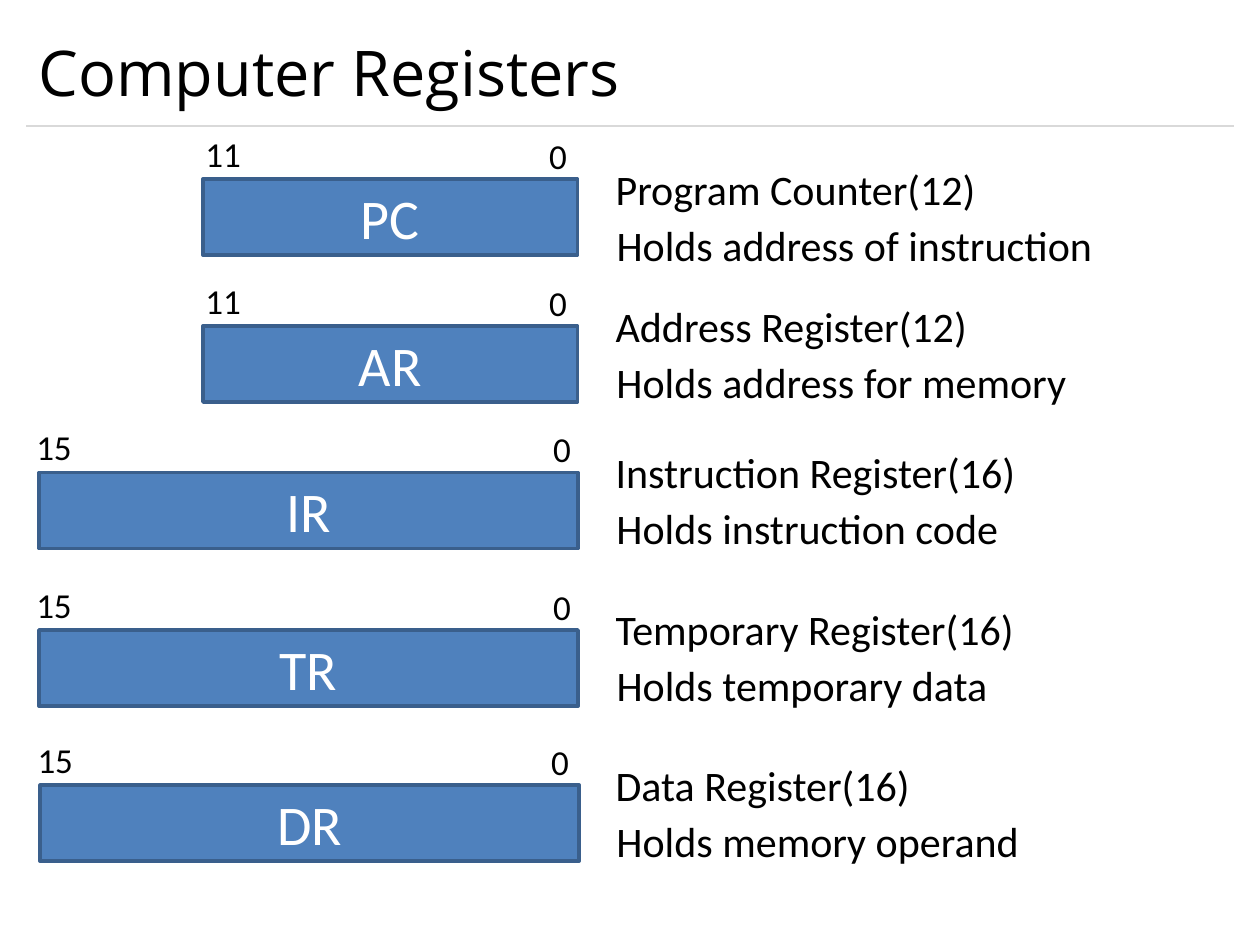
"""Build a slide of five computer registers with bit ranges and their roles."""
import pptx
import pptx.util
import pptx.dml.color
import pptx.enum.shapes
import pptx.enum.text
import lxml.etree

Pt = pptx.util.Pt
Align = pptx.enum.text.PP_ALIGN
Anchor = pptx.enum.text.MSO_ANCHOR
COLORS = {"text": "000000", "box": "4F81BD", "edge": "3A5F8C",
          "label": "FFFFFF", "rule": "D9D9D9"}


def color(name):
    return pptx.dml.color.RGBColor.from_string(COLORS[name])


def write(shape, text, size, tint="text", align=Align.LEFT,
          anchor=Anchor.TOP, font="Calibri", wrap=True):
    frame = shape.text_frame
    frame.word_wrap = wrap
    frame.vertical_anchor = anchor
    para = frame.paragraphs[0]
    para.alignment = align
    run = para.add_run()
    run.text = text
    run.font.size = Pt(size)
    run.font.name = font
    run.font.color.rgb = color(tint)


deck = pptx.Presentation()
deck.slide_width, deck.slide_height = Pt(720), Pt(540)
slide = deck.slides.add_slide(deck.slide_layouts[6])
shapes = slide.shapes

rule = shapes.add_connector(pptx.enum.shapes.MSO_CONNECTOR.STRAIGHT,
                            Pt(15), Pt(72), Pt(705), Pt(72))
rule.line.color.rgb = color("rule")
rule.line.width = Pt(0.75)
lxml.etree.SubElement(rule._element.spPr, pptx.oxml.ns.qn("a:effectLst"))

title = shapes.add_textbox(Pt(15), Pt(9), Pt(690), Pt(63))
write(title, "Computer Registers", 36, anchor=Anchor.MIDDLE, font="Open Sans")

rows = [
    ("PC", 12, 102.2, 90, 306.7, "Program Counter", "Holds address of instruction", 289),
    ("AR", 12, 186.2, 168, 306.7, "Address Register", "Holds address for memory", 274),
    ("IR", 16, 270, 251.5, 309, "Instruction Register", "Holds instruction code", 235),
    ("TR", 16, 360, 341.5, 309, "Temporary Register", "Holds temporary data", 228),
    ("DR", 16, 448.6, 430.3, 307.8, "Data Register", "Holds memory operand", 247),
]
for name, bits, top, note, zero, full, role, width in rows:
    left, size, shift = (116, 214, 6.5) if bits == 12 else (22.3, 308, 9.4)
    if name == "DR":
        left += 0.7
    box = shapes.add_shape(pptx.enum.shapes.MSO_SHAPE.RECTANGLE,
                           Pt(left), Pt(top), Pt(size), Pt(43.5))
    box.shadow.inherit = False
    box.fill.solid()
    box.fill.fore_color.rgb = color("box")
    box.line.color.rgb = color("edge")
    box.line.width = Pt(2)
    write(box, name, 32, "label", Align.CENTER, Anchor.MIDDLE)

    low = shapes.add_textbox(Pt(zero), Pt(top - 29), Pt(21.6), Pt(31.5))
    write(low, "0", 20, align=Align.CENTER)
    high = shapes.add_textbox(Pt(left - shift), Pt(top - 30.2), Pt(36), Pt(31.5))
    write(high, str(bits - 1), 20, align=Align.CENTER)

    head = shapes.add_textbox(Pt(344.7), Pt(note), Pt(315), Pt(36))
    write(head, f"{full}({bits})", 24)
    body = shapes.add_textbox(Pt(345.2), Pt(note + 32), Pt(width), Pt(36))
    write(body, role, 24, wrap=False)

deck.save("out.pptx")
